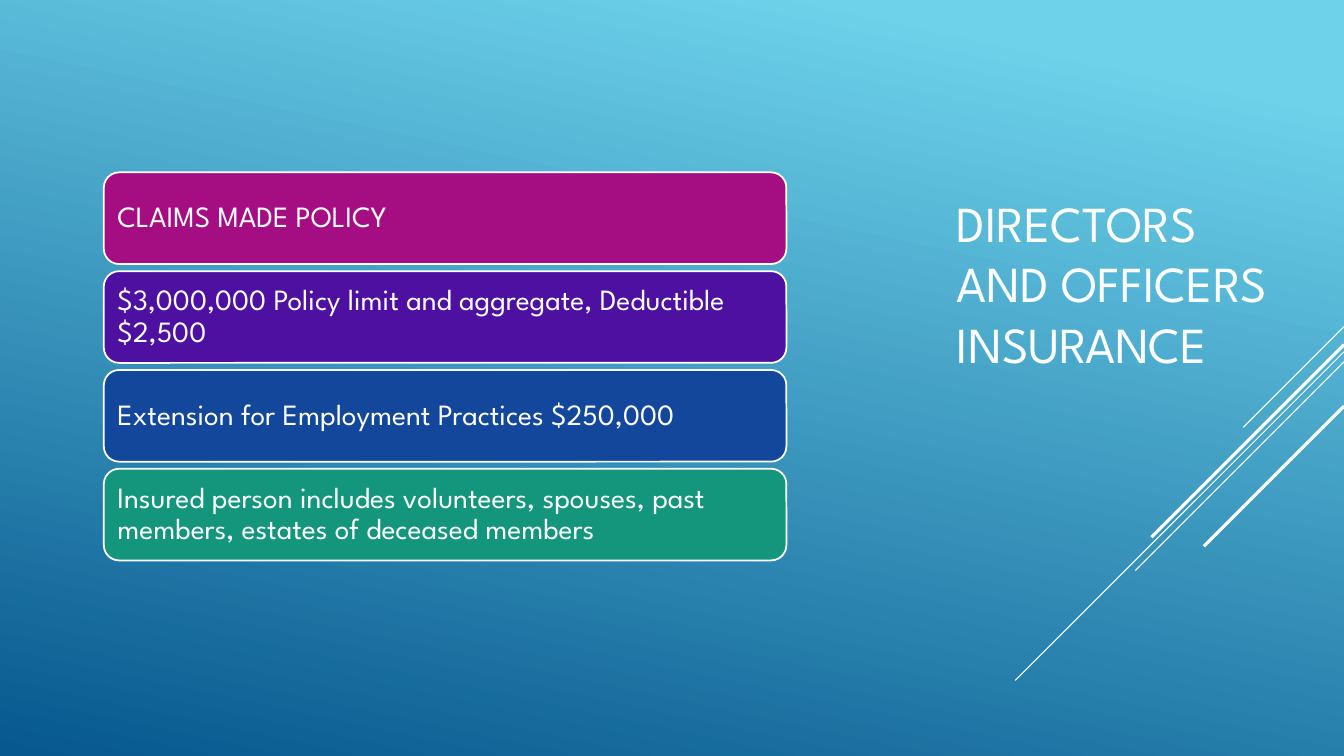
from lxml import etree
from pptx import Presentation, util as u
from pptx.dml.color import RGBColor
from pptx.enum import shapes, text
from pptx.oxml.ns import qn

WIDTH, HEIGHT = 13.33, 7.5
FONT = "League Spartan"
COLORS = {
    "sky": "6ED2EB", "deep": "06588E", "white": "FFFFFF",
    "magenta": "A50E82", "violet": "4D10A0", "blue": "12479B", "green": "14967C",
}
TITLE = "DIRECTORS AND OFFICERS INSURANCE"
TITLE_BOX = (9.39, 1.03, 3.33, 3.55)
POLICY_POINTS = [
    ("CLAIMS MADE POLICY", "magenta"),
    ("$3,000,000 Policy limit and aggregate, Deductible $2,500", "violet"),
    ("Extension for Employment Practices $250,000", "blue"),
    ("Insured person includes volunteers, spouses, past members, "
     "estates of deceased members", "green"),
]
CARD_LEFT, CARD_TOP, CARD_WIDTH, CARD_HEIGHT, CARD_PITCH = 1.03, 1.71, 6.77, 0.91, 0.98
# Each diagonal: height on the right edge, horizontal run, line width
DIAGONALS = [
    (3.24, 1.0, 0.75), (3.49, 3.26, 0.75), (3.59, 2.07, 0.75),
    (3.42, 1.91, 2.25), (4.03, 1.39, 2.25),
]


def color(name):
    return RGBColor.from_string(COLORS[name])


def inches(*lengths):
    return [u.Inches(length) for length in lengths]


def write(shape, words, size, inset, spacing):
    frame = shape.text_frame
    frame_format = {
        "word_wrap": True, "vertical_anchor": text.MSO_ANCHOR.MIDDLE,
        "margin_left": u.Inches(inset), "margin_right": u.Inches(inset),
    }
    for name, value in frame_format.items():
        setattr(frame, name, value)
    paragraph = frame.paragraphs[0]
    paragraph.alignment = text.PP_ALIGN.LEFT
    paragraph.line_spacing = spacing
    run = paragraph.add_run()
    run.text = words
    for name, value in {"name": FONT, "size": u.Pt(size)}.items():
        setattr(run.font, name, value)
    run.font.color.rgb = color("white")


def add_backdrop(slide):
    backdrop = slide.shapes.add_shape(
        shapes.MSO_SHAPE.RECTANGLE, *inches(0, 0, WIDTH, HEIGHT))
    backdrop.shadow.inherit = False
    backdrop.line.fill.background()
    backdrop.fill.gradient()
    backdrop.fill.gradient_angle = 360 - 102
    stops = zip(backdrop.fill.gradient_stops, [(0.1, "sky"), (1, "deep")])
    for stop, (position, name) in stops:
        stop.position = position
        stop.color.rgb = color(name)


def add_diagonal(slide, top, run, weight):
    diagonal = slide.shapes.add_connector(
        shapes.MSO_CONNECTOR.STRAIGHT, *inches(WIDTH, top, WIDTH - run, top + run))
    diagonal.line.color.rgb = color("white")
    diagonal.line.width = u.Pt(weight)
    etree.SubElement(diagonal.element.spPr, qn("a:effectLst"))


def add_card(slide, row, words, fill):
    card = slide.shapes.add_shape(
        shapes.MSO_SHAPE.ROUNDED_RECTANGLE,
        *inches(CARD_LEFT, CARD_TOP + row * CARD_PITCH, CARD_WIDTH, CARD_HEIGHT))
    card.shadow.inherit = False
    card.fill.solid()
    card.fill.fore_color.rgb = color(fill)
    card.line.color.rgb = color("white")
    card.line.width = u.Pt(1.25)
    write(card, words, 21, 0.09, 0.9)


def main():
    presentation = Presentation()
    presentation.slide_width, presentation.slide_height = inches(WIDTH, HEIGHT)
    slide = presentation.slides.add_slide(presentation.slide_layouts[6])
    add_backdrop(slide)
    for diagonal in DIAGONALS:
        add_diagonal(slide, *diagonal)
    write(slide.shapes.add_textbox(*inches(*TITLE_BOX)), TITLE, 36, 0.1, 1.0)
    for row, (words, fill) in enumerate(POLICY_POINTS):
        add_card(slide, row, words, fill)
    presentation.save("out.pptx")


if __name__ == "__main__":
    main()
